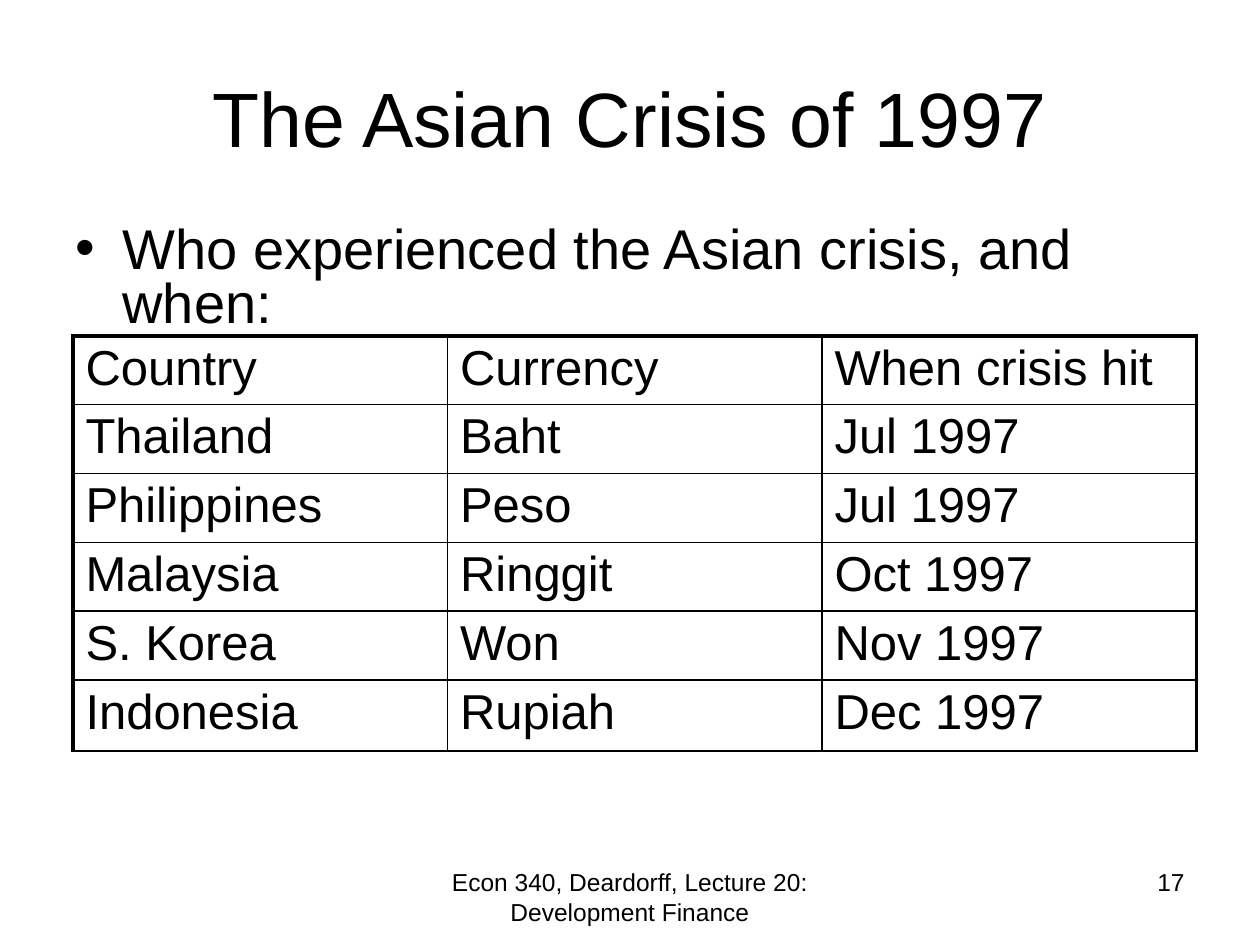
from dataclasses import dataclass

from lxml.etree import SubElement
from pptx import Presentation
from pptx.dml.color import RGBColor
from pptx.enum.text import MSO_ANCHOR as Anchor, PP_ALIGN as Align
from pptx.oxml.ns import qn
from pptx.slide import Slide
from pptx.table import _Cell as Cell
from pptx.text.text import _Paragraph as Paragraph
from pptx.util import Cm, Pt


@dataclass(frozen=True)
class Theme:
    font: str = "Arial"
    ink: str = "000000"
    title: int = 44
    body: int = 32
    table: int = 28
    footer: int = 14
    outer_line: float = 2.25
    inner_line: float = 1


@dataclass(frozen=True)
class Label:
    text: str
    left: float
    top: float
    width: float
    height: float
    size: int
    align: Align = Align.LEFT
    anchor: Anchor = Anchor.TOP
    bullet: str = ""


THEME = Theme()

LABELS = [
    Label("The Asian Crisis of 1997", 1.27, 0.76, 22.86, 3.18,
          THEME.title, Align.CENTER, Anchor.MIDDLE),
    Label("Who experienced the Asian crisis, and when:", 1.27, 4.44, 22.86, 2.33,
          THEME.body, bullet="•"),
    Label("Econ 340, Deardorff, Lecture 20: Development Finance", 8.68, 17.36, 8.04, 1.32,
          THEME.footer, Align.CENTER),
    Label("17", 18.2, 17.36, 5.93, 1.32, THEME.footer, Align.RIGHT),
]

CRISES = [
    ("Country", "Currency", "When crisis hit"),
    ("Thailand", "Baht", "Jul 1997"),
    ("Philippines", "Peso", "Jul 1997"),
    ("Malaysia", "Ringgit", "Oct 1997"),
    ("S. Korea", "Won", "Nov 1997"),
    ("Indonesia", "Rupiah", "Dec 1997"),
]
TABLE_LEFT, TABLE_TOP = 1.47, 6.77
COLUMN_WIDTH, ROW_HEIGHT, LAST_ROW_HEIGHT = 7.55, 1.36, 1.43


def apply(target: object, formats: dict) -> None:
    for name, value in formats.items():
        setattr(target, name, value)


def write(paragraph: Paragraph, text: str, size: int) -> None:
    run = paragraph.add_run()
    run.text = text
    apply(run.font, {"name": THEME.font, "size": Pt(size)})
    run.font.color.rgb = RGBColor.from_string(THEME.ink)


def add_bullet(paragraph: Paragraph, mark: str) -> None:
    paragraph.line_spacing = 0.8
    properties = paragraph._p.get_or_add_pPr()
    properties.set("marL", str(Cm(0.95)))
    properties.set("indent", str(Cm(-0.95)))
    SubElement(properties, qn("a:buFont"), typeface=THEME.font)
    SubElement(properties, qn("a:buChar"), char=mark)


def draw_label(slide: Slide, label: Label) -> None:
    box = slide.shapes.add_textbox(
        Cm(label.left), Cm(label.top), Cm(label.width), Cm(label.height))
    apply(box.text_frame, {"word_wrap": True, "vertical_anchor": label.anchor})
    paragraph = box.text_frame.paragraphs[0]
    paragraph.alignment = label.align
    if label.bullet:
        add_bullet(paragraph, label.bullet)
    write(paragraph, label.text, label.size)


def draw_borders(cell: Cell, widths: dict[str, float]) -> None:
    properties = cell._tc.get_or_add_tcPr()
    for position, (side, width) in enumerate(widths.items()):
        line = properties.makeelement(qn(f"a:{side}"), {"w": str(Pt(width))})
        fill = SubElement(line, qn("a:solidFill"))
        SubElement(fill, qn("a:srgbClr"), val=THEME.ink)
        properties.insert(position, line)


def draw_table(slide: Slide, rows: list[tuple[str, ...]]) -> None:
    column_count = len(rows[0])
    heights = [ROW_HEIGHT] * (len(rows) - 1) + [LAST_ROW_HEIGHT]
    table = slide.shapes.add_table(
        len(rows), column_count, Cm(TABLE_LEFT), Cm(TABLE_TOP),
        Cm(COLUMN_WIDTH * column_count), Cm(sum(heights))).table
    apply(table, {"first_row": False, "horz_banding": False})
    for column in table.columns:
        column.width = Cm(COLUMN_WIDTH)
    outer, inner = THEME.outer_line, THEME.inner_line
    for row_index, (entries, height) in enumerate(zip(rows, heights)):
        table.rows[row_index].height = Cm(height)
        for column_index, entry in enumerate(entries):
            cell = table.cell(row_index, column_index)
            apply(cell, {"margin_top": Cm(0.1), "margin_bottom": Cm(0.1)})
            cell.fill.background()
            write(cell.text_frame.paragraphs[0], entry, THEME.table)
            draw_borders(cell, {
                "lnL": outer if column_index == 0 else inner,
                "lnR": outer if column_index == column_count - 1 else inner,
                "lnT": outer if row_index == 0 else inner,
                "lnB": inner,
            })


def main() -> None:
    deck = Presentation()
    apply(deck, {"slide_width": Cm(25.4), "slide_height": Cm(19.05)})
    slide = deck.slides.add_slide(deck.slide_layouts[6])
    for label in LABELS:
        draw_label(slide, label)
    draw_table(slide, CRISES)
    deck.save("out.pptx")


if __name__ == "__main__":
    main()
